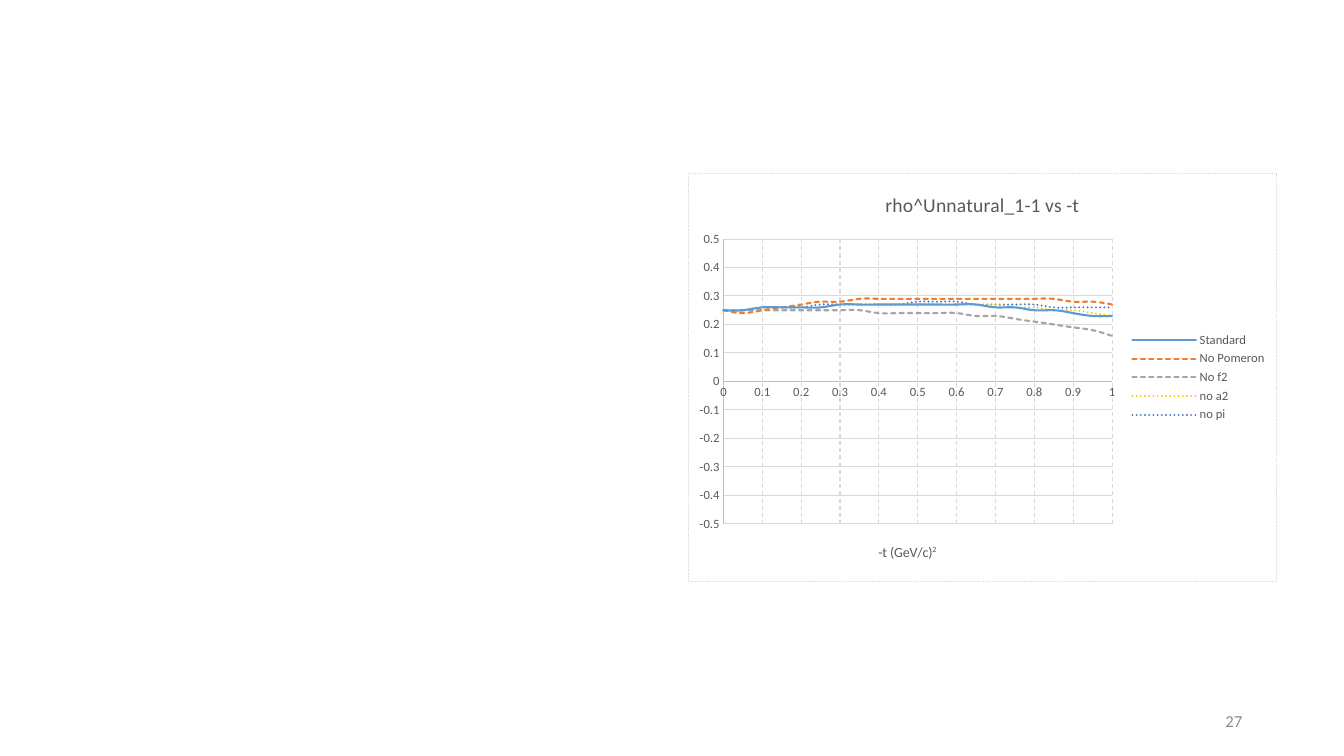
from dataclasses import dataclass

from lxml import etree
from pptx import Presentation
from pptx.chart.data import XyChartData
from pptx.dml.color import RGBColor
from pptx.enum.chart import XL_CHART_TYPE, XL_LEGEND_POSITION, XL_TICK_MARK
from pptx.enum.dml import MSO_LINE
from pptx.enum.text import MSO_ANCHOR, PP_ALIGN
from pptx.oxml import parse_xml
from pptx.oxml.ns import nsdecls, qn
from pptx.util import Inches, Pt

SMOOTH = XL_CHART_TYPE.XY_SCATTER_SMOOTH_NO_MARKERS
RIGHT = XL_LEGEND_POSITION.RIGHT
NO_TICK = XL_TICK_MARK.NONE
DASH = MSO_LINE.DASH
SYS_DASH = MSO_LINE.SQUARE_DOT
SYS_DOT = MSO_LINE.ROUND_DOT


@dataclass(frozen=True)
class Theme:
    font: str = "Calibri"
    ink: str = "595959"
    pale: str = "8C8C8C"
    axis: str = "BFBFBF"
    grid: str = "D9D9D9"
    paper: str = "FFFFFF"
    title: int = 14
    label: int = 10
    tick: int = 9
    page: int = 12
    thin: float = 0.75
    curve: float = 1.5


THEME = Theme()
STEP = 0.05
PLOT = {"x": 0.06, "y": 0.16, "w": 0.66, "h": 0.7}
CURVES = [
    ("Standard", "5B9BD5", None,
     [0.25, 0.25, 0.26, 0.26, 0.26, 0.26, 0.27, 0.27, 0.27, 0.27, 0.27,
      0.27, 0.27, 0.27, 0.26, 0.26, 0.25, 0.25, 0.24, 0.23, 0.23]),
    ("No Pomeron", "ED7D31", SYS_DASH,
     [0.25, 0.24, 0.25, 0.26, 0.27, 0.28, 0.28, 0.29, 0.29, 0.29, 0.29,
      0.29, 0.29, 0.29, 0.29, 0.29, 0.29, 0.29, 0.28, 0.28, 0.27]),
    ("No f2", "A5A5A5", SYS_DASH,
     [0.25, 0.25, 0.25, 0.25, 0.25, 0.25, 0.25, 0.25, 0.24, 0.24, 0.24,
      0.24, 0.24, 0.23, 0.23, 0.22, 0.21, 0.2, 0.19, 0.18, 0.16]),
    ("no a2", "FFC000", SYS_DOT,
     [0.25, 0.25, 0.26, 0.26, 0.26, 0.26, 0.27, 0.27, 0.27, 0.27, 0.27,
      0.27, 0.27, 0.27, 0.27, 0.26, 0.26, 0.25, 0.25, 0.24, 0.23]),
    ("no pi", "4472C4", SYS_DOT,
     [0.25, 0.25, 0.26, 0.26, 0.26, 0.27, 0.27, 0.27, 0.27, 0.27, 0.28,
      0.28, 0.28, 0.27, 0.27, 0.27, 0.27, 0.26, 0.26, 0.26, 0.26]),
]


def assign(target, values):
    for name, value in values.items():
        setattr(target, name, value)


def style_font(font, size, color=THEME.ink):
    assign(font, {"name": THEME.font, "size": Pt(size), "bold": False})
    font.color.rgb = RGBColor.from_string(color)


def style_line(line, color, width=THEME.thin, dash=None):
    line.color.rgb = RGBColor.from_string(color)
    assign(line, {"width": Pt(width), "dash_style": dash})


def add_run(frame, text, size, color=THEME.ink):
    run = frame.paragraphs[0].add_run()
    run.text = text
    style_font(run.font, size, color)
    return run


def style_axis(axis, low, high, dash=None):
    assign(axis, {
        "minimum_scale": low, "maximum_scale": high, "major_unit": 0.1,
        "major_tick_mark": NO_TICK, "minor_tick_mark": NO_TICK,
        "has_major_gridlines": True,
    })
    assign(axis.tick_labels,
           {"number_format": "General", "number_format_is_linked": False})
    style_font(axis.tick_labels.font, THEME.tick)
    style_line(axis.format.line, THEME.axis)
    style_line(axis.major_gridlines.format.line, THEME.grid, dash=dash)


def frame_chart(chart):
    """Give the chart area its fill and dotted border."""
    area = parse_xml(
        f'<c:spPr {nsdecls("c", "a")}>'
        f'<a:solidFill><a:srgbClr val="{THEME.paper}"/></a:solidFill>'
        f'<a:ln w="{Pt(THEME.thin)}"><a:solidFill>'
        f'<a:srgbClr val="{THEME.grid}"/></a:solidFill>'
        '<a:prstDash val="sysDot"/></a:ln></c:spPr>')
    chart._chartSpace.find(qn("c:chart")).addnext(area)


def place_plot(chart):
    """Fix the inner plot area as fractions of the chart."""
    area = chart._chartSpace.find(".//" + qn("c:plotArea"))
    for old in area.findall(qn("c:layout")):
        area.remove(old)
    layout = etree.Element(qn("c:layout"))
    manual = etree.SubElement(layout, qn("c:manualLayout"))
    values = {"layoutTarget": "inner", "xMode": "edge", "yMode": "edge", **PLOT}
    for name, value in values.items():
        etree.SubElement(manual, qn(f"c:{name}")).set("val", str(value))
    area.insert(0, layout)


def style_curves(plot):
    """Colour the curves, round their line caps and smooth them."""
    plot.vary_by_categories = False
    for curve, (_, color, dash, _) in zip(plot.series, CURVES):
        style_line(curve.format.line, color, THEME.curve, dash)
    for line in plot._element.iter(qn("a:ln")):
        line.set("cap", "rnd")
    for smooth in plot._element.iter(qn("c:smooth")):
        smooth.set("val", "1")


def add_graph(slide):
    data = XyChartData()
    for name, _, _, values in CURVES:
        curve = data.add_series(name)
        for i, value in enumerate(values):
            curve.add_data_point(round(i * STEP, 2), value)
    box = map(Inches, (6.82, 1.72, 5.85, 4.05))
    chart = slide.shapes.add_chart(SMOOTH, *box, data).chart
    style_font(chart.font, THEME.label)
    add_run(chart.chart_title.text_frame, "rho^Unnatural_1-1 vs -t", THEME.title)
    chart.chart_title.include_in_layout = False
    chart.has_legend = True
    assign(chart.legend, {"position": RIGHT, "include_in_layout": False})
    style_font(chart.legend.font, THEME.tick)
    style_axis(chart.category_axis, 0, 1, DASH)
    style_axis(chart.value_axis, -0.5, 0.5)
    label = chart.category_axis.axis_title.text_frame
    add_run(label, "-t (GeV/c)", THEME.label)
    power = add_run(label, "2", THEME.label)
    power._r.get_or_add_rPr().set("baseline", "30000")
    style_curves(chart.plots[0])
    place_plot(chart)
    frame_chart(chart)


def add_page(slide, number):
    box = slide.shapes.add_textbox(*map(Inches, (9.42, 6.95, 3, 0.4)))
    frame = box.text_frame
    assign(frame, {"word_wrap": True, "vertical_anchor": MSO_ANCHOR.MIDDLE})
    frame.paragraphs[0].alignment = PP_ALIGN.RIGHT
    add_run(frame, number, THEME.page, THEME.pale)


def main():
    deck = Presentation()
    assign(deck, {"slide_width": Inches(13.33), "slide_height": Inches(7.5)})
    slide = deck.slides.add_slide(deck.slide_layouts[6])
    add_graph(slide)
    add_page(slide, "27")
    deck.save("out.pptx")


if __name__ == "__main__":
    main()
